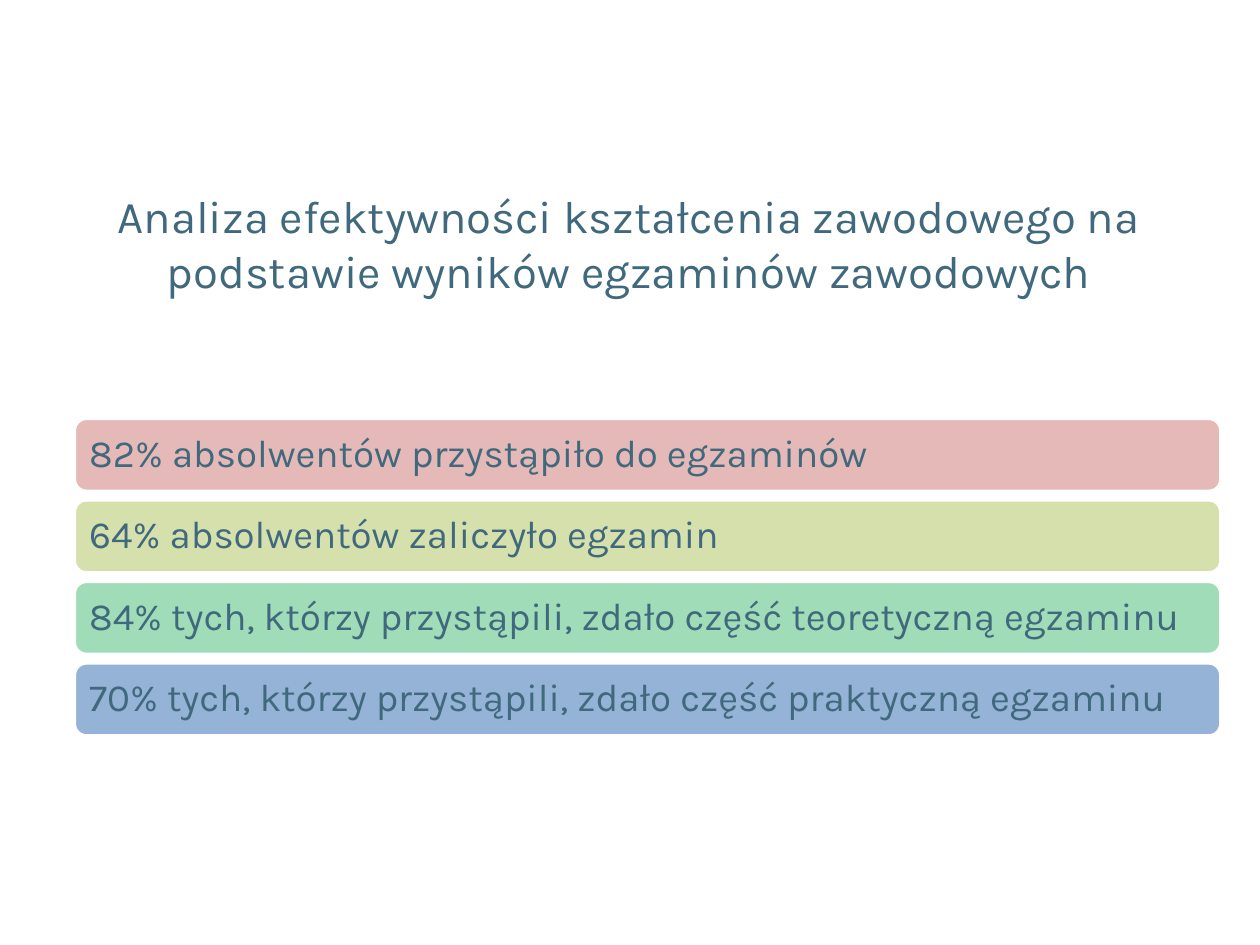
from pptx import Presentation
from pptx.dml.color import RGBColor
from pptx.enum.shapes import MSO_SHAPE
from pptx.enum.text import MSO_ANCHOR, MSO_AUTO_SIZE, PP_ALIGN
from pptx.util import Inches, Pt

ROUNDED = MSO_SHAPE.ROUNDED_RECTANGLE
MIDDLE, BOTTOM = MSO_ANCHOR.MIDDLE, MSO_ANCHOR.BOTTOM
LEFT, CENTER = PP_ALIGN.LEFT, PP_ALIGN.CENTER
NO_AUTOFIT = MSO_AUTO_SIZE.NONE

FONT = "Karla"
COLORS = {
    "text": "40697D",
    "outline": "FFFFFF",
    "rose": "E5B9B7",
    "olive": "D5E0AC",
    "mint": "A0DCB7",
    "blue": "95B3D7",
}
RESULTS = [
    ("82% absolwentów przystąpiło do egzaminów", "rose"),
    ("64% absolwentów zaliczyło egzamin", "olive"),
    ("84% tych, którzy przystąpili, zdało część teoretyczną egzaminu", "mint"),
    ("70% tych, którzy przystąpili, zdało część praktyczną egzaminu", "blue"),
]
FIRST_TOP = 3.32
PITCH = 0.647


def color(name):
    return RGBColor.from_string(COLORS[name])


def write(frame, text, size, align, anchor):
    frame.word_wrap = True
    frame.auto_size = NO_AUTOFIT
    frame.vertical_anchor = anchor
    paragraph = frame.paragraphs[0]
    paragraph.alignment = align
    run = paragraph.add_run()
    run.text = text
    run.font.name = FONT
    run.font.size = Pt(size)
    run.font.color.rgb = color("text")
    return paragraph


def add_heading(slide, text):
    heading = slide.shapes.title
    heading.left, heading.top = Inches(0.31), Inches(1.48)
    heading.width, heading.height = Inches(9.37), Inches(0.93)
    write(heading.text_frame, text, 26, CENTER, BOTTOM)


def add_result_bar(slide, top, text, fill):
    bar = slide.shapes.add_shape(
        ROUNDED, Inches(0.59), Inches(top), Inches(9.1), Inches(0.58)
    )
    bar.shadow.inherit = False
    bar.fill.solid()
    bar.fill.fore_color.rgb = color(fill)
    bar.line.color.rgb = color("outline")
    bar.line.width = Pt(2)
    frame = bar.text_frame
    frame.margin_left = frame.margin_right = Inches(0.09)
    frame.margin_top = frame.margin_bottom = Inches(0.09)
    paragraph = write(frame, text, 22, LEFT, MIDDLE)
    paragraph.line_spacing = 0.9


def main():
    deck = Presentation()
    deck.slide_width, deck.slide_height = Inches(10), Inches(7.5)
    slide = deck.slides.add_slide(deck.slide_layouts[5])
    for index, (text, fill) in enumerate(RESULTS):
        add_result_bar(slide, FIRST_TOP + index * PITCH, text, fill)
    add_heading(
        slide,
        "Analiza efektywności kształcenia zawodowego na podstawie "
        "wyników egzaminów zawodowych",
    )
    deck.save("out.pptx")


if __name__ == "__main__":
    main()
